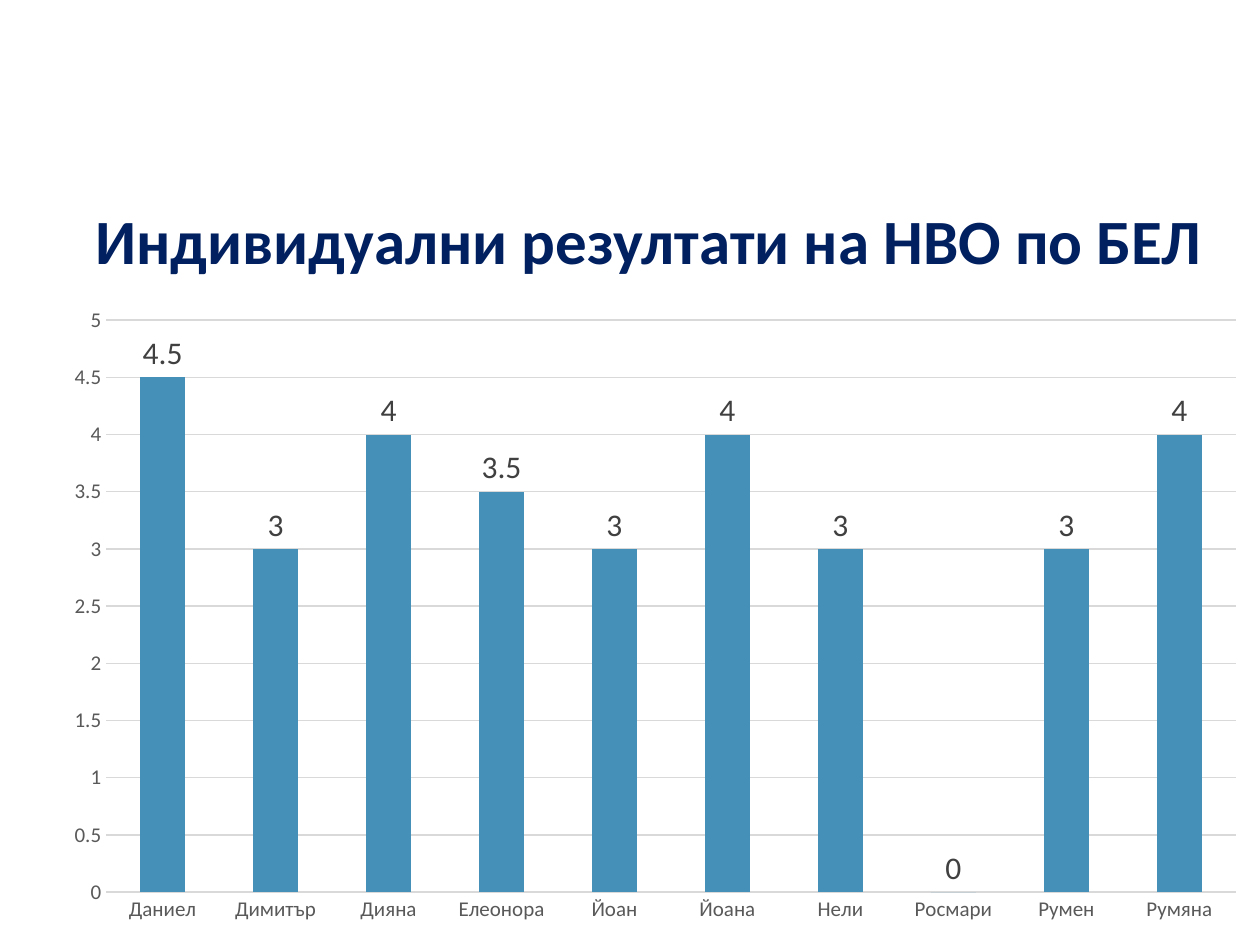
from pptx import Presentation
from pptx.chart.data import CategoryChartData
from pptx.dml.color import RGBColor as RGB
from pptx.enum.chart import XL_CHART_TYPE as CT, XL_LABEL_POSITION as LP, XL_TICK_MARK as TM
from pptx.enum.text import MSO_ANCHOR as MA, PP_ALIGN as PA
from pptx.util import Inches, Pt

COLORS = {"title": "002060", "bar": "4590B8", "axis": "595959",
          "label": "404040", "grid": "D9D9D9", "text": "000000"}
RESULTS = {"Даниел": 4.5, "Димитър": 3, "Дияна": 4, "Елеонора": 3.5, "Йоан": 3,
           "Йоана": 4, "Нели": 3, "Росмари": 0, "Румен": 3, "Румяна": 4}


def color(name):
    return RGB.from_string(COLORS[name])


def style(font, name, size, bold=False):
    for key, value in {"name": "Calibri", "size": Pt(size), "bold": bold}.items():
        setattr(font, key, value)
    font.color.rgb = color(name)


prs = Presentation()
prs.slide_width, prs.slide_height = Inches(10), Inches(7.5)
W, H = prs.slide_width, prs.slide_height
s = prs.slides.add_slide(prs.slide_layouts[5])

left = int(W * 0.04)
sp = s.shapes.title
box = {"left": left, "top": int(H * 0.16), "width": int(W * 0.95), "height": int(H * 0.14)}
for key, value in box.items():
    setattr(sp, key, value)
tf = sp.text_frame
tf.word_wrap = True
tf.vertical_anchor = MA.BOTTOM
p = tf.paragraphs[0]
p.alignment = PA.CENTER
r = p.add_run()
r.text = "Индивидуални резултати на НВО по БЕЛ"
style(r.font, "title", 36, True)

data = CategoryChartData()
data.categories = list(RESULTS)
data.add_series("Series 1", list(RESULTS.values()))
top = Inches(2.34)
chart = s.shapes.add_chart(CT.COLUMN_CLUSTERED, left, top, W - left, Inches(5.08), data).chart
chart.has_legend = False
chart.has_title = False
style(chart.font, "text", 10)

for axis in (chart.category_axis, chart.value_axis):
    axis.major_tick_mark = axis.minor_tick_mark = TM.NONE
    axis.format.line.fill.background()
    style(axis.tick_labels.font, "axis", 12)

axis = chart.value_axis
for key, value in {"minimum_scale": 0, "maximum_scale": 5, "major_unit": 0.5}.items():
    setattr(axis, key, value)
line = axis.major_gridlines.format.line
line.color.rgb = color("grid")
line.width = Pt(0.75)

plot = chart.plots[0]
plot.gap_width = 150
plot.vary_by_categories = False
fill = plot.series[0].format.fill
fill.solid()
fill.fore_color.rgb = color("bar")
labels = plot.series[0].data_labels
labels.show_value = True
labels.position = LP.OUTSIDE_END
style(labels.font, "label", 18)

prs.save("out.pptx")
